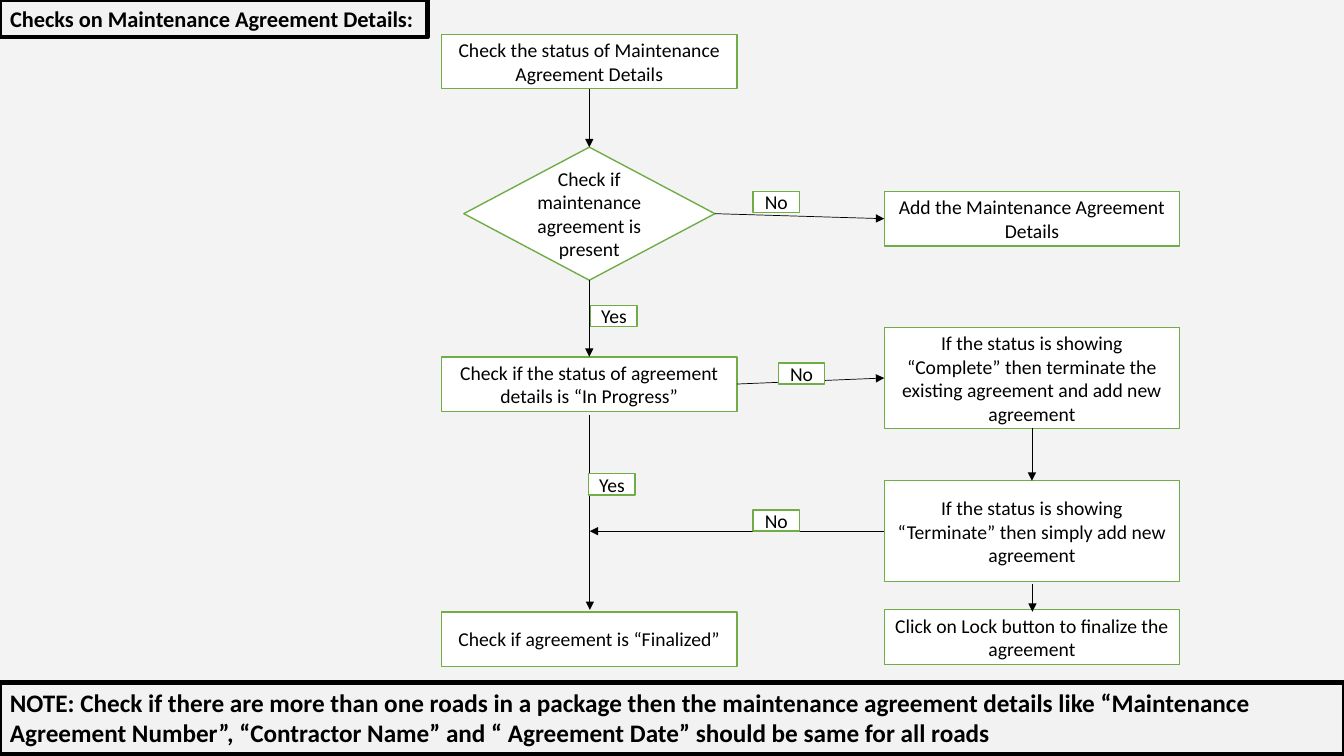
from lxml.etree import SubElement
from pptx import Presentation
from pptx.dml.color import RGBColor
from pptx.enum.shapes import MSO_CONNECTOR, MSO_SHAPE
from pptx.enum.text import MSO_ANCHOR, MSO_AUTO_SIZE, PP_ALIGN
from pptx.oxml.ns import qn
from pptx.util import Pt

PX = 9144
COLORS = {name: RGBColor.from_string(code) for name, code in {
    "page": "F3F3F3", "banner": "F2F2F2", "box": "FFFFFF",
    "border": "70AD47", "ink": "000000"}.items()}
TOP, LEFT, BOTTOM, RIGHT = range(4)


def style_box(box, fill, border, width, text, size, bold, align, anchor):
    box.fill.solid()
    box.fill.fore_color.rgb = COLORS[fill]
    box.line.color.rgb = COLORS[border]
    box.line.width = Pt(width)
    frame = box.text_frame
    frame.text = text
    frame.word_wrap = True
    frame.auto_size = MSO_AUTO_SIZE.NONE
    frame.vertical_anchor = anchor
    para = frame.paragraphs[0]
    para.alignment = align
    font = para.runs[0].font
    font.name = "Calibri"
    font.size = Pt(size)
    font.bold = bold
    font.color.rgb = COLORS["ink"]


def add_arrow(x1, y1, x2, y2):
    arrow = page.shapes.add_connector(
        MSO_CONNECTOR.STRAIGHT, x1 * PX, y1 * PX, x2 * PX, y2 * PX)
    arrow.line.color.rgb = COLORS["ink"]
    arrow.line.width = Pt(0.5)
    SubElement(arrow.line._get_or_add_ln(), qn("a:tailEnd"), type="triangle")
    SubElement(arrow._element.spPr, qn("a:effectLst"))
    return arrow


deck = Presentation()
deck.slide_width = 1333 * PX
deck.slide_height = 750 * PX
page = deck.slides.add_slide(deck.slide_layouts[5])
page.background.fill.solid()
page.background.fill.fore_color.rgb = COLORS["page"]

STEP_WIDTH, STEP_HEIGHT, TALL_HEIGHT = 293, 54, 100
MAIN, SIDE = 438, 877
steps = {
    "status": (MAIN, 34, STEP_HEIGHT, "Check the status of Maintenance Agreement Details"),
    "progress": (MAIN, 354, STEP_HEIGHT,
                 "Check if the status of agreement details is “In Progress”"),
    "finalized": (MAIN, 607, STEP_HEIGHT, "Check if agreement is “Finalized”"),
    "add": (SIDE, 190, STEP_HEIGHT, "Add the Maintenance Agreement Details"),
    "complete": (SIDE, 325, TALL_HEIGHT,
                 "If the status is showing “Complete” then terminate the existing "
                 "agreement and add new agreement"),
    "terminate": (SIDE, 477, TALL_HEIGHT,
                  "If the status is showing “Terminate” then simply add new agreement"),
    "lock": (SIDE, 605, STEP_HEIGHT, "Click on Lock button to finalize the agreement"),
}
boxes = {}
for name, (left, top, height, text) in steps.items():
    boxes[name] = page.shapes.add_shape(
        MSO_SHAPE.RECTANGLE, left * PX, top * PX, STEP_WIDTH * PX, height * PX)
    boxes[name].shadow.inherit = False
    style_box(boxes[name], "box", "border", 1, text, 14, False,
              PP_ALIGN.CENTER, MSO_ANCHOR.MIDDLE)

decision = page.shapes.add_shape(
    MSO_SHAPE.DIAMOND, 460 * PX, 146 * PX, 249 * PX, 132 * PX)
decision.shadow.inherit = False
style_box(decision, "box", "border", 1, "Check if maintenance agreement is present",
          14, False, PP_ALIGN.CENTER, MSO_ANCHOR.MIDDLE)
boxes["present"] = decision

for source, source_side, target, target_side in [
        ("status", BOTTOM, "present", TOP),
        ("present", BOTTOM, "progress", TOP),
        ("present", RIGHT, "add", LEFT),
        ("progress", RIGHT, "complete", LEFT),
        ("complete", BOTTOM, "terminate", TOP)]:
    arrow = add_arrow(0, 0, 0, 0)
    arrow.begin_connect(boxes[source], source_side)
    arrow.end_connect(boxes[target], target_side)

add_arrow(585, 412, 585, 605)
add_arrow(1024, 579, 1024, 607)
add_arrow(877, 527, 585, 527)

for left, top, answer in [(747, 190, "No"), (772, 360, "No"), (586, 303, "Yes"),
                          (584, 470, "Yes"), (747, 506, "No")]:
    label = page.shapes.add_shape(
        MSO_SHAPE.RECTANGLE, left * PX, top * PX, 46 * PX, 21 * PX)
    label.shadow.inherit = False
    style_box(label, "box", "border", 1, answer, 14, False,
              PP_ALIGN.CENTER, MSO_ANCHOR.MIDDLE)
    label.text_frame.margin_left = label.text_frame.margin_right = 0

note = page.shapes.add_shape(MSO_SHAPE.RECTANGLE, 0, 677 * PX, 1333 * PX, 71 * PX)
note.shadow.inherit = False
style_box(note, "banner", "ink", 3,
          "NOTE: Check if there are more than one roads in a package then the maintenance "
          "agreement details like “Maintenance Agreement Number”, “Contractor Name” and "
          "“ Agreement Date” should be same for all roads",
          18, True, PP_ALIGN.LEFT, MSO_ANCHOR.TOP)

title = page.shapes.title
title.left, title.top, title.width, title.height = 0, 0, 424 * PX, 37 * PX
style_box(title, "banner", "ink", 3, "Checks on Maintenance Agreement Details:",
          16, True, PP_ALIGN.LEFT, MSO_ANCHOR.TOP)

deck.save("out.pptx")
